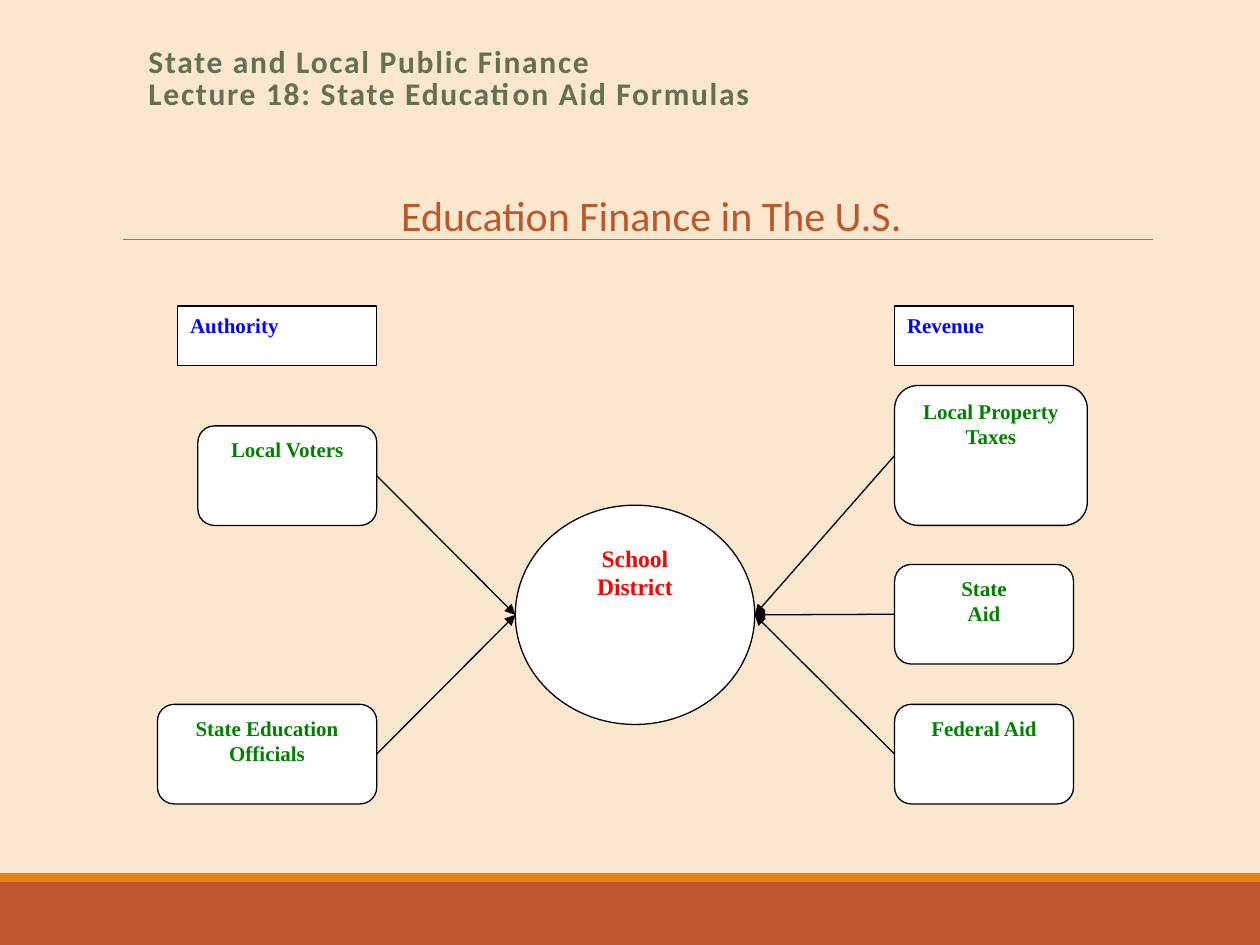
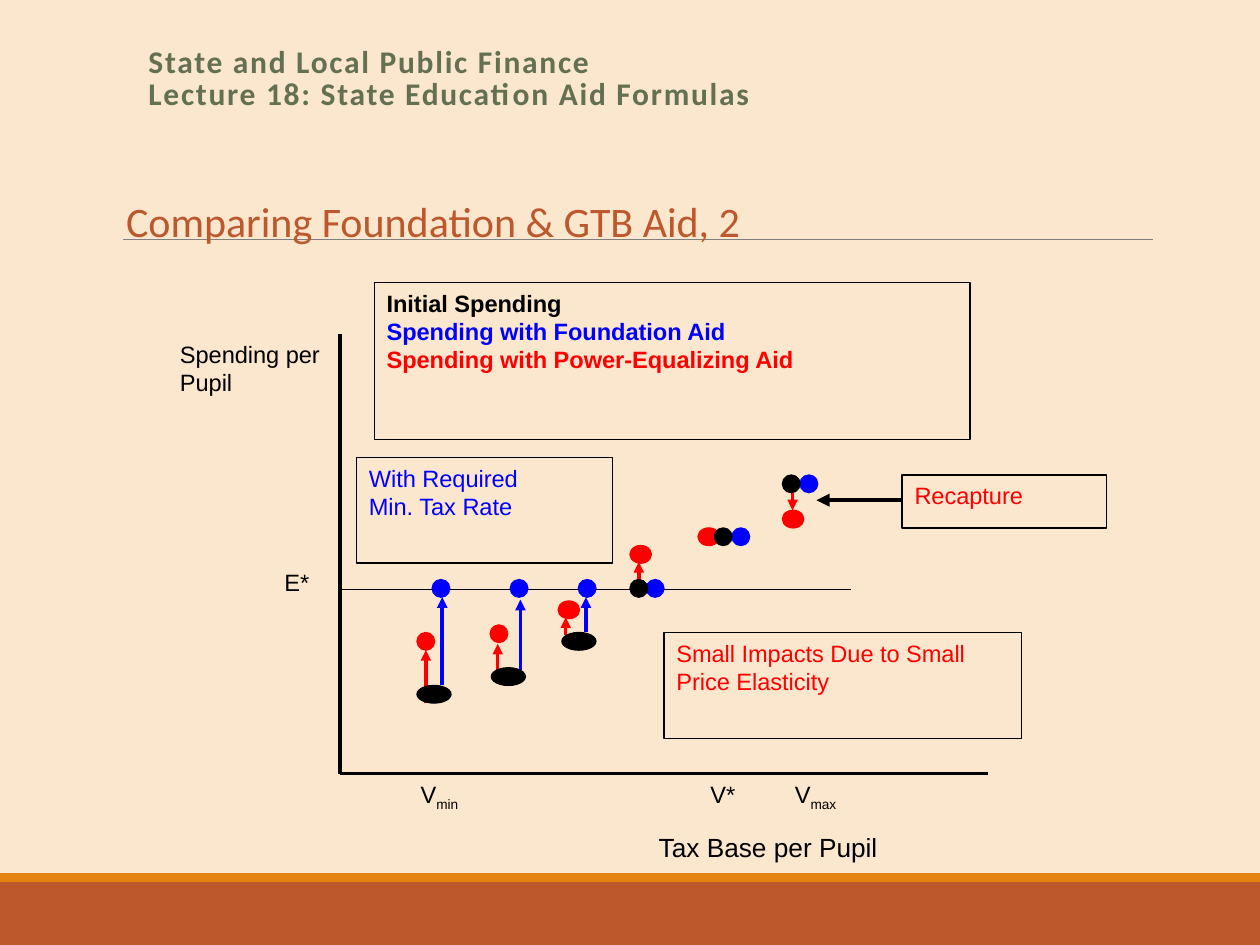
from lxml import etree
from pptx import Presentation
from pptx.dml.color import RGBColor
from pptx.enum.shapes import MSO_CONNECTOR, MSO_SHAPE
from pptx.enum.text import MSO_ANCHOR, MSO_AUTO_SIZE, PP_ALIGN
from pptx.oxml.ns import qn
from pptx.util import Inches, Pt

CREAM = RGBColor(0xFB, 0xE6, 0xCE)
RUST = RGBColor(0xBD, 0x58, 0x2C)
ORANGE = RGBColor(0xE4, 0x83, 0x12)
OLIVE = RGBColor(0x63, 0x70, 0x52)
GRAY = RGBColor(0x80, 0x80, 0x80)
BLACK = RGBColor(0x00, 0x00, 0x00)
WHITE = RGBColor(0xFF, 0xFF, 0xFF)
RED = RGBColor(0xFF, 0x00, 0x00)
GREEN = RGBColor(0x00, 0x80, 0x00)
BLUE = RGBColor(0x00, 0x00, 0xFF)

RECTANGLE = MSO_SHAPE.RECTANGLE
ELLIPSE = MSO_SHAPE.OVAL
CIRCLE = MSO_SHAPE.FLOWCHART_CONNECTOR
ROUNDED = MSO_SHAPE.FLOWCHART_ALTERNATE_PROCESS
PROCESS = MSO_SHAPE.FLOWCHART_PROCESS
STRAIGHT = MSO_CONNECTOR.STRAIGHT
LEFT, CENTER = PP_ALIGN.LEFT, PP_ALIGN.CENTER
TOP = MSO_ANCHOR.TOP
NO_AUTOFIT = MSO_AUTO_SIZE.NONE
LEFT_SITE, RIGHT_SITE = 1, 3

HEADING_FONT = "Calibri"
FLOW_FONT = "Times New Roman"
GRAPH_FONT = "Arial"


def add_box(slide, at, kind=None, fill=None, outline=None, paragraphs=(),
            font=GRAPH_FONT, size=13.5, bold=False, align=LEFT):
    """Add a preset shape, or a text box when kind is None.

    Each paragraph is (colour, text) or (colour, text, subscript).
    """
    place = [Inches(length) for length in at]
    if kind is None:
        box = slide.shapes.add_textbox(*place)
    else:
        box = slide.shapes.add_shape(kind, *place)
        box.shadow.inherit = False
        if fill is None:
            box.fill.background()
        else:
            box.fill.solid()
            box.fill.fore_color.rgb = fill
        if outline is None:
            box.line.fill.background()
        else:
            box.line.color.rgb = outline
            box.line.width = Pt(0.75)
    frame = box.text_frame
    frame.word_wrap = True
    frame.vertical_anchor = TOP
    for number, (color, *texts) in enumerate(paragraphs):
        paragraph = frame.add_paragraph() if number else frame.paragraphs[0]
        paragraph.alignment = align
        for position, text in enumerate(texts):
            run = paragraph.add_run()
            run.text = text
            run.font.name = font
            run.font.size = Pt(size)
            run.font.bold = bold
            run.font.color.rgb = color
            if position:
                run.font._element.set("baseline", "-25000")
    return box


def add_line(slide, start, end, color=BLACK, width=0.75, arrow=False):
    line = slide.shapes.add_connector(
        STRAIGHT, *[Inches(length) for length in (*start, *end)])
    line.line.color.rgb = color
    line.line.width = Pt(width)
    properties = line.element.spPr
    if arrow:
        outline = properties.find(qn("a:ln"))
        etree.SubElement(outline, qn("a:tailEnd"), type="triangle")
    etree.SubElement(properties, qn("a:effectLst"))
    return line


presentation = Presentation()
presentation.slide_width = Inches(10)
presentation.slide_height = Inches(7.5)
title_only = presentation.slide_layouts[5]
master = presentation.slide_master
master.background.fill.solid()
master.background.fill.fore_color.rgb = CREAM

# Running header and slide titles
header_lines = ["State and Local Public Finance",
                "Lecture 18: State Education Aid Formulas"]
titles = [
    ("Education Finance in The U.S.", (0.88, 1.45, 8.58, 0.84), CENTER),
    ("Comparing Foundation & GTB Aid, 2", (0.9, 1.5, 6.43, 0.5), LEFT),
]
for title_text, title_at, title_align in titles:
    slide = presentation.slides.add_slide(title_only)
    title = slide.shapes.title
    title.left, title.top, title.width, title.height = map(Inches, title_at)
    title.text_frame.vertical_anchor = TOP
    title.text_frame.auto_size = NO_AUTOFIT
    title_paragraph = title.text_frame.paragraphs[0]
    title_paragraph.alignment = title_align
    title_run = title_paragraph.add_run()
    title_run.text = title_text
    title_run.font.name = HEADING_FONT
    title_run.font.size = Pt(24)
    title_run.font.color.rgb = RUST

    header = add_box(slide, (1.08, 0.33, 8.25, 0.65))
    header_paragraph = header.text_frame.paragraphs[0]
    header_paragraph.line_spacing = 0.85
    for number, header_line in enumerate(header_lines):
        if number:
            header_paragraph.add_line_break()
        header_run = header_paragraph.add_run()
        header_run.text = header_line
        header_run.font.name = HEADING_FONT
        header_run.font.size = Pt(18)
        header_run.font.bold = True
        header_run.font.color.rgb = OLIVE
        header_run.font._element.set("spc", "100")

finance_slide, comparison_slide = presentation.slides

# Bands and title rule are drawn once and moved to the master
decorations = [
    add_box(finance_slide, (0, 7, 10, 0.5), RECTANGLE, RUST),
    add_box(finance_slide, (0, 6.93, 10, 0.07), RECTANGLE, ORANGE),
    add_line(finance_slide, (0.98, 1.9), (9.15, 1.9), GRAY, 0.5),
]
for number, decoration in enumerate(decorations):
    decoration.element.xpath(".//p:cNvPr")[0].set("id", str(101 + number))
    master.element.cSld.spTree.append(decoration.element)

# Slide 1: who governs and who pays for a school district
add_box(finance_slide, (4.09, 4.01, 1.9, 1.74), CIRCLE, WHITE, BLACK,
        [(RED, "School District")], FLOW_FONT, 13.5, True, CENTER)
district_left, district_right = (4.09, 4.88), (5.99, 4.88)

influences = [
    ((7.1, 3.06, 1.53, 1.11), ["Local Property Taxes"], LEFT_SITE, district_right),
    ((7.1, 4.48, 1.42, 0.79), ["State", "Aid"], LEFT_SITE, district_right),
    ((7.1, 5.59, 1.42, 0.79), ["Federal Aid"], LEFT_SITE, district_right),
    ((1.57, 3.38, 1.42, 0.79), ["Local Voters"], RIGHT_SITE, district_left),
    ((1.25, 5.59, 1.74, 0.79), ["State Education Officials"], RIGHT_SITE, district_left),
]
for at, lines, site, district_side in influences:
    influence = add_box(finance_slide, at, ROUNDED, WHITE, BLACK,
                        [(GREEN, line) for line in lines],
                        FLOW_FONT, 12, True, CENTER)
    flow = add_line(finance_slide, district_side, district_side, arrow=True)
    flow.begin_connect(influence, site)

for column, left, width in [("Authority", 1.41, 1.58), ("Revenue", 7.1, 1.42)]:
    add_box(finance_slide, (left, 2.43, width, 0.47), PROCESS, WHITE, BLACK,
            [(BLUE, column)], FLOW_FONT, 12, True)

# Slide 2: axes and foundation level
origin = (2.7, 6.14)
add_line(comparison_slide, (2.7, 2.65), origin, width=2)
add_line(comparison_slide, origin, (7.84, 6.14), width=2)
add_line(comparison_slide, (2.7, 4.68), (6.75, 4.68))

axis_labels = [
    ((2.16, 4.46, 0.54, 0.56), 13.5, ["E*"]),
    ((1.33, 2.65, 1.35, 0.97), 13.5, ["Spending per Pupil"]),
    ((5.13, 6.55, 2.84, 0.56), 15, ["Tax Base per Pupil"]),
    ((3.24, 6.14, 1.08, 0.56), 13.5, ["V", "min"]),
    ((5.54, 6.14, 1.08, 0.56), 13.5, ["V*"]),
    ((6.21, 6.14, 1.08, 0.56), 13.5, ["V", "max"]),
]
for at, size, texts in axis_labels:
    add_box(comparison_slide, at, paragraphs=[(BLACK, *texts)], size=size)

# Legend and remarks
add_box(comparison_slide, (2.97, 2.24, 4.73, 1.25), RECTANGLE, None, BLACK,
        [(BLACK, "Initial Spending"),
         (BLUE, "Spending with Foundation Aid"),
         (RED, "Spending with Power-Equalizing Aid")], bold=True)
remarks = [
    ((7.16, 3.77, 1.62, 0.42), RED, ["Recapture"]),
    ((5.27, 5.02, 2.84, 0.84), RED, ["Small Impacts Due to Small Price Elasticity"]),
    ((2.83, 3.63, 2.03, 0.84), BLUE, ["With Required", "Min. Tax Rate"]),
]
for at, color, lines in remarks:
    add_box(comparison_slide, at, RECTANGLE, None, BLACK,
            [(color, line) for line in lines])
add_line(comparison_slide, (7.16, 3.97), (6.48, 3.97), width=2.5, arrow=True)

# Spending changes: x, start y, end y
spending_changes = {
    RED: [(3.38, 5.58, 5.16), (3.95, 5.39, 5.11), (4.49, 5.04, 4.9),
          (5.07, 4.6, 4.46), (6.29, 3.91, 4.05)],
    BLUE: [(3.51, 5.44, 4.74), (4.13, 5.32, 4.76), (4.65, 5.02, 4.74)],
}
for color, changes in spending_changes.items():
    for x, start_y, end_y in changes:
        add_line(comparison_slide, (x, start_y), (x, end_y), color, 2, True)

# Spending levels: left, top, width
spending_levels = {
    RED: [(3.31, 5.02, 0.14), (3.89, 4.96, 0.14), (4.43, 4.77, 0.17),
          (5, 4.33, 0.17), (5.54, 4.19, 0.17), (6.21, 4.05, 0.17)],
    BLUE: [(3.43, 4.6, 0.14), (4.05, 4.6, 0.14), (4.59, 4.6, 0.14),
           (5.13, 4.6, 0.14), (5.81, 4.19, 0.14), (6.35, 3.77, 0.14)],
    BLACK: [(3.31, 5.44, 0.27), (3.9, 5.3, 0.27), (4.46, 5.02, 0.27),
            (5, 4.6, 0.14), (5.67, 4.19, 0.14), (6.21, 3.77, 0.14)],
}
for color, levels in spending_levels.items():
    for left, top, width in levels:
        add_box(comparison_slide, (left, top, width, 0.14), ELLIPSE, color, color)

presentation.save("out.pptx")
